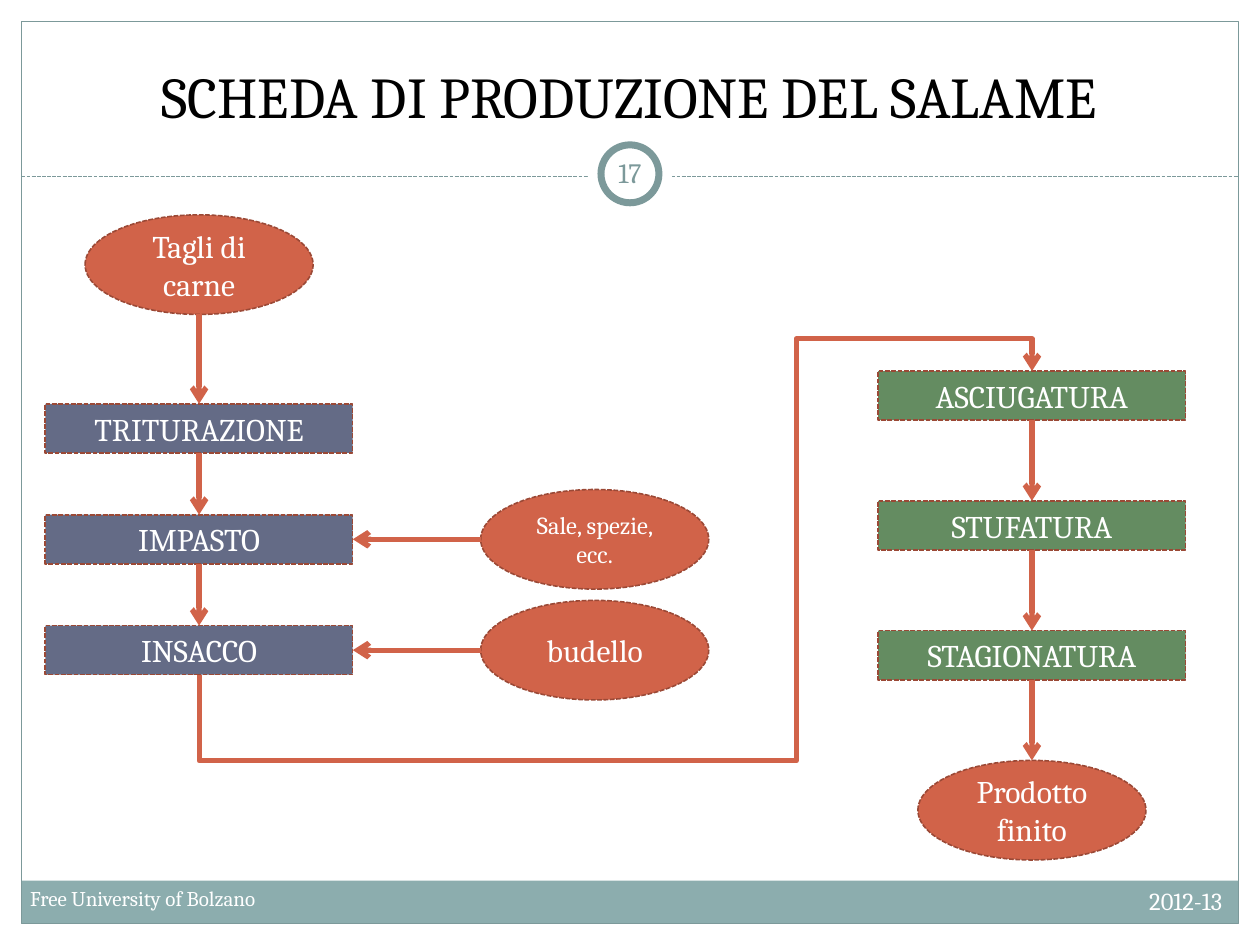
from lxml import etree
from pptx import Presentation
from pptx import util as u
from pptx.dml.color import RGBColor
from pptx.enum import dml, shapes, text
from pptx.oxml.ns import qn

# Content
TITLE = "SCHEDA DI PRODUZIONE DEL SALAME"
FOOTER, YEAR, NUMBER = "Free University of Bolzano", "2012-13", "17"
FONT = "Cambria"
WHITE, TEAL, BAND = "FFFFFF", "7C999A", "8CADAE"
ORANGE, BLUE, GREEN, EDGE = "D16349", "646B86", "648C61", "9B4936"

WIDTH, HEIGHT = 10, 7.5
MARGIN = 0.17
RULE_Y = 1.4  # dashed rule under the title
COLUMNS = {"left": 1.58, "middle": 4.72, "right": 8.19}  # centres
LEFT_TOP, LEFT_STEP = 3.4, 0.88
RIGHT_TOP, RIGHT_STEP = 3.14, 1.03
LANE_LOW, LANE_X, LANE_HIGH = 6.04, 6.32, 2.69  # course of the bent arrow
RECT, OVAL = shapes.MSO_SHAPE.RECTANGLE, shapes.MSO_SHAPE.OVAL
SIZES = {RECT: (2.44, 0.39), OVAL: (1.81, 0.79)}

# Label, shape, column, centre height, fill, text size
NODES = [
    ("Tagli di carne", OVAL, "left", 2.1, ORANGE, 18),
    ("Sale, spezie, ecc.", OVAL, "middle", LEFT_TOP + LEFT_STEP, ORANGE, 14),
    ("budello", OVAL, "middle", LEFT_TOP + 2 * LEFT_STEP, ORANGE, 18),
    ("Prodotto finito", OVAL, "right", 6.43, ORANGE, 18),
]
NODES += [(label, RECT, "left", LEFT_TOP + row * LEFT_STEP, BLUE, 18)
          for row, label in enumerate(["TRITURAZIONE", "IMPASTO", "INSACCO"])]
NODES += [(label, RECT, "right", RIGHT_TOP + row * RIGHT_STEP, GREEN, 18)
          for row, label in enumerate(["ASCIUGATURA", "STUFATURA", "STAGIONATURA"])]

DOWN_CHAINS = [
    ["Tagli di carne", "TRITURAZIONE", "IMPASTO", "INSACCO"],
    ["ASCIUGATURA", "STUFATURA", "STAGIONATURA", "Prodotto finito"],
]
SIDE_INPUTS = [("Sale, spezie, ecc.", "IMPASTO"), ("budello", "INSACCO")]


def color(value):
    return RGBColor.from_string(value)


def style_line(line, value, width, dashed=False):
    line.color.rgb = color(value)
    line.width = u.Pt(width)
    if dashed:
        line.dash_style = dml.MSO_LINE.SQUARE_DOT
        line._get_or_add_ln().find(qn("a:prstDash")).set("val", "sysDash")


def write(shape, words, size, value, align, anchor):
    frame = shape.text_frame
    frame.word_wrap = True
    frame.auto_size = text.MSO_AUTO_SIZE.NONE
    frame.vertical_anchor = anchor
    para = frame.paragraphs[0]
    para.alignment = align
    span = para.add_run()
    span.text = words
    span.font.name, span.font.size = FONT, u.Pt(size)
    span.font.color.rgb = color(value)
    return frame


def add_box(kind, left, top, width, height, fill=None, line=None, weight=0.75, dashed=False):
    box = page.shapes.add_shape(kind, *map(u.Inches, (left, top, width, height)))
    box.shadow.inherit = False
    if fill:
        box.fill.solid()
        box.fill.fore_color.rgb = color(fill)
    else:
        box.fill.background()
    if line:
        style_line(box.line, line, weight, dashed)
    else:
        box.line.fill.background()
    return box


def add_line(start, end, value, weight, dashed=False, arrow=True,
             kind=shapes.MSO_CONNECTOR.STRAIGHT):
    link = page.shapes.add_connector(kind, *map(u.Inches, (*start, *end)))
    style_line(link.line, value, weight, dashed)
    if arrow:
        etree.SubElement(link.line._get_or_add_ln(), qn("a:tailEnd"), type="arrow")
    etree.SubElement(link._element.spPr, qn("a:effectLst"))
    return link


def add_text(words, left, top, width, height, size, value, align, anchor=text.MSO_ANCHOR.TOP):
    box = page.shapes.add_textbox(*map(u.Inches, (left, top, width, height)))
    return write(box, words, size, value, align, anchor)


def edge(label, dx, dy):
    """Point on a node's edge: dx and dy are -1, 0 or 1."""
    x, y, width, height = places[label]
    return x + dx * width / 2, y + dy * height / 2


deck = Presentation()
deck.slide_width, deck.slide_height = u.Inches(WIDTH), u.Inches(HEIGHT)
page = deck.slides.add_slide(deck.slide_layouts[5])
CENTER, MIDDLE = text.PP_ALIGN.CENTER, text.MSO_ANCHOR.MIDDLE

# Footer band, frame and dashed rule
inner_width = WIDTH - 2 * MARGIN
add_box(RECT, MARGIN, 6.99, inner_width, 0.34, BAND)
add_box(RECT, MARGIN, MARGIN, inner_width, HEIGHT - 2 * MARGIN, line=TEAL)
add_line((MARGIN, RULE_Y), (WIDTH - MARGIN, RULE_Y), TEAL, 0.75, dashed=True, arrow=False)

# Number badge
for size, line in ((0.67, None), (0.46, TEAL)):
    add_box(OVAL, (WIDTH - size) / 2, 1.38 - size / 2, size, size, WHITE, line, 4)

# Title and small texts
title = page.shapes.title
title.left, title.top, title.width, title.height = map(u.Inches, (0.33, 0.25, 9.33, 0.83))
write(title, TITLE, 33, "000000", CENTER, text.MSO_ANCHOR.BOTTOM)
add_text(YEAR, 6.47, 6.98, 3.33, 0.4, 14, WHITE, text.PP_ALIGN.RIGHT)
add_text(FOOTER, 0.14, 6.98, 3.92, 0.4, 12, WHITE, text.PP_ALIGN.LEFT)
badge = add_text(NUMBER, 4.75, 1.13, 0.5, 0.48, 16, TEAL, CENTER, MIDDLE)
badge.margin_left = badge.margin_right = u.Inches(0.05)

# Process steps and ingredients
places = {}
for label, kind, column, y, fill, size in NODES:
    x, (width, height) = COLUMNS[column], SIZES[kind]
    places[label] = (x, y, width, height)
    box = add_box(kind, x - width / 2, y - height / 2, width, height, fill, EDGE, 0.9, True)
    write(box, label, size, WHITE, CENTER, MIDDLE)

# Straight arrows
for chain in DOWN_CHAINS:
    for upper, lower in zip(chain, chain[1:]):
        add_line(edge(upper, 0, 1), edge(lower, 0, -1), ORANGE, 3)
for source, target in SIDE_INPUTS:
    add_line(edge(source, -1, 0), edge(target, 1, 0), ORANGE, 3)

# Bent arrow between the two chains: laid out on its side, then turned by 90 degrees
(x1, y1), (x2, y2) = edge("INSACCO", 0, 1), edge("ASCIUGATURA", 0, -1)
mid_x, mid_y = (x1 + x2) / 2, (y1 + y2) / 2
half_w, half_h = (y1 - y2) / 2, (x2 - x1) / 2
bent = add_line((mid_x + half_w, mid_y + half_h), (mid_x - half_w, mid_y - half_h),
                ORANGE, 3, kind=shapes.MSO_CONNECTOR.ELBOW)
bent._element.spPr.find(qn("a:xfrm")).set("rot", str(90 * 60000))
geometry = bent._element.spPr.find(qn("a:prstGeom"))
geometry.set("prst", "bentConnector5")
guides = geometry.find(qn("a:avLst"))
bends = [(y1 - LANE_LOW) / (y1 - y2), (LANE_X - x1) / (x2 - x1), (y1 - LANE_HIGH) / (y1 - y2)]
for index, share in enumerate(bends, 1):
    etree.SubElement(guides, qn("a:gd"), name=f"adj{index}", fmla=f"val {round(share * 100000)}")

deck.save("out.pptx")
